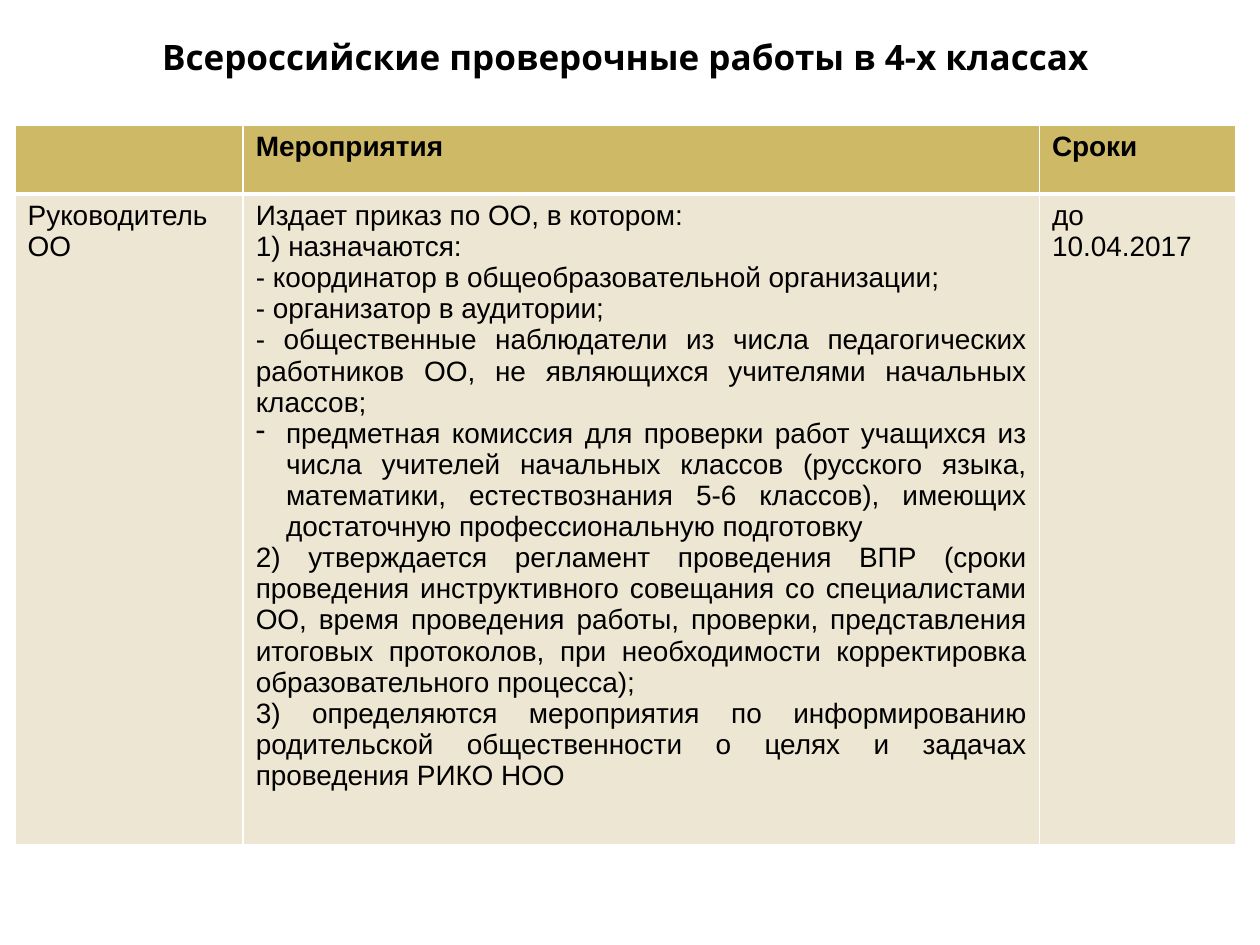
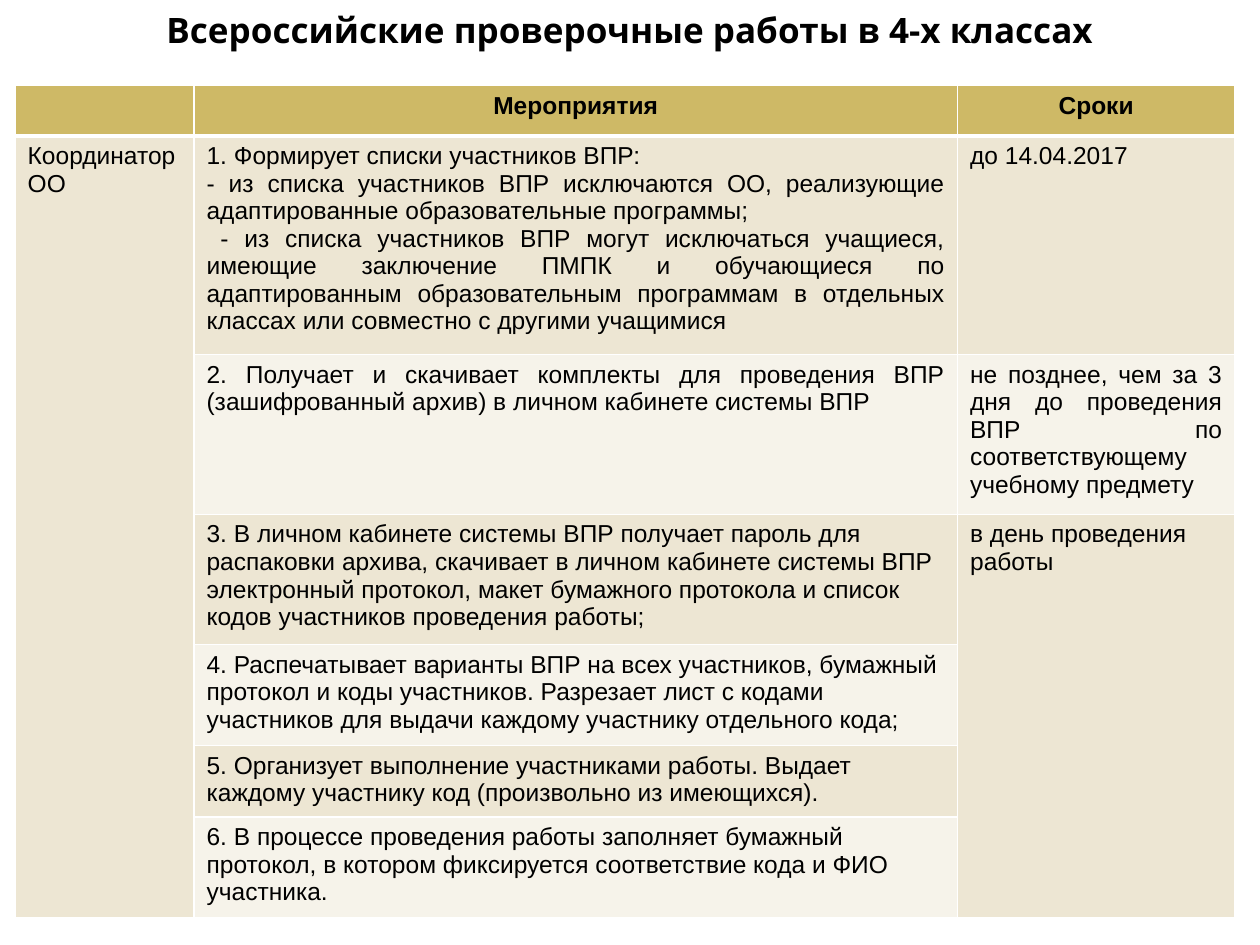
from dataclasses import dataclass

from lxml import etree
from pptx import Presentation
from pptx.dml.color import RGBColor
from pptx.enum.text import MSO_ANCHOR, PP_ALIGN
from pptx.oxml.ns import qn
from pptx.util import Inches, Pt

LEFT, CENTER, JUSTIFY = PP_ALIGN.LEFT, PP_ALIGN.CENTER, PP_ALIGN.JUSTIFY
MIDDLE = MSO_ANCHOR.MIDDLE

COLORS = {
    "text": "000000",
    "header": "CEB966",
    "band_dark": "EDE6D3",
    "band_light": "F6F3EA",
    "border": "FFFFFF",
}
TITLE = "Всероссийские проверочные работы в 4-х классах"
TITLE_FONT = "Open Sans"
BODY_FONT = "Arial"
TABLE_LEFT = 0.12
BULLET_INDENT = 0.24


@dataclass
class Line:
    text: str
    alignment: PP_ALIGN = LEFT
    bullet: str = ""
    first_indent: float = 0


def justified(*texts):
    return [Line(text, JUSTIFY) for text in texts]


def set_font(paragraph, name, size, bold):
    paragraph.font.name = name
    paragraph.font.size = Pt(size)
    paragraph.font.bold = bold
    paragraph.font.color.rgb = RGBColor.from_string(COLORS["text"])


def set_indent(paragraph, line):
    properties = paragraph._p.get_or_add_pPr()
    if line.bullet:
        properties.set("marL", str(Inches(BULLET_INDENT)))
        properties.set("indent", str(-Inches(BULLET_INDENT)))
        bullet = etree.SubElement(properties, qn("a:buChar"))
        bullet.set("char", line.bullet)
    elif line.first_indent:
        properties.set("indent", str(Inches(line.first_indent)))


def set_borders(cell, bottom_width):
    properties = cell._tc.get_or_add_tcPr()
    widths = {"a:lnL": 1, "a:lnR": 1, "a:lnT": 1, "a:lnB": bottom_width}
    for position, (tag, width) in enumerate(widths.items()):
        border = etree.Element(qn(tag), w=str(Pt(width)))
        fill = etree.SubElement(border, qn("a:solidFill"))
        etree.SubElement(fill, qn("a:srgbClr"), val=COLORS["border"])
        properties.insert(position, border)


def add_title(slide, left, top, width, height):
    shape = slide.shapes.add_textbox(
        Inches(left), Inches(top), Inches(width), Inches(height))
    frame = shape.text_frame
    frame.word_wrap = True
    frame.vertical_anchor = MIDDLE
    paragraph = frame.paragraphs[0]
    paragraph.text = TITLE
    paragraph.alignment = CENTER
    set_font(paragraph, TITLE_FONT, 20, True)


def fill_cell(cell, lines, row_index, font_size):
    is_header = row_index == 0
    bands = ("band_light", "band_dark")
    color = "header" if is_header else bands[row_index % 2]
    cell.fill.solid()
    cell.fill.fore_color.rgb = RGBColor.from_string(COLORS[color])
    set_borders(cell, 3 if is_header else 1)
    frame = cell.text_frame
    for index, line in enumerate(lines or [Line("")]):
        paragraph = frame.add_paragraph() if index else frame.paragraphs[0]
        paragraph.text = line.text
        paragraph.alignment = line.alignment
        set_indent(paragraph, line)
        set_font(paragraph, BODY_FONT, font_size, is_header)


def add_schedule(slide, top, column_widths, row_heights, rows, font_size):
    table = slide.shapes.add_table(
        len(row_heights), len(column_widths), Inches(TABLE_LEFT), Inches(top),
        Inches(sum(column_widths)), Inches(sum(row_heights))).table
    for column, width in zip(table.columns, column_widths):
        column.width = Inches(width)
    for row, height in zip(table.rows, row_heights):
        row.height = Inches(height)
    for row_index, row in enumerate(rows):
        for column_index, lines in enumerate(row):
            fill_cell(table.cell(row_index, column_index), lines, row_index, font_size)
    return table


def header_row(alignment):
    return [[], [Line("Мероприятия", alignment)], [Line("Сроки", alignment)]]


def build_head_slide(slide):
    add_title(slide, 0.12, 0.13, 9.69, 0.63)
    tasks = justified(
        "Издает приказ по ОО, в котором:",
        "1) назначаются:",
        "- координатор в общеобразовательной организации;",
        "- организатор в аудитории;",
        "- общественные наблюдатели из числа педагогических работников ОО, "
        "не являющихся учителями начальных классов;",
    ) + [Line(
        "предметная комиссия для проверки работ учащихся из числа учителей "
        "начальных классов (русского языка, математики, естествознания "
        "5-6 классов), имеющих достаточную профессиональную подготовку",
        JUSTIFY, bullet="-",
    )] + justified(
        "2) утверждается регламент проведения ВПР (сроки проведения "
        "инструктивного совещания со специалистами ОО, время проведения работы, "
        "проверки, представления итоговых протоколов, при необходимости "
        "корректировка образовательного процесса);",
        "3) определяются мероприятия по информированию родительской "
        "общественности о целях и задачах проведения РИКО НОО",
    )
    rows = [
        header_row(JUSTIFY),
        [justified("Руководитель ОО"), tasks, justified("до 10.04.2017")],
    ]
    add_schedule(slide, 0.99, [1.81, 6.32, 1.56], [0.55, 5.12], rows, 16)


def build_coordinator_slide(slide):
    add_title(slide, 0, 0, 10, 0.47)
    lists_task = justified(
        "1. Формирует списки участников ВПР:",
        "- из списка участников ВПР исключаются ОО, реализующие "
        "адаптированные образовательные программы;",
    ) + [Line(
        "- из списка участников ВПР могут исключаться учащиеся, имеющие "
        "заключение ПМПК и обучающиеся по адаптированным образовательным "
        "программам в отдельных классах или совместно с другими учащимися",
        JUSTIFY, first_indent=0.11,
    )]
    download_task = justified(
        "2. Получает и скачивает комплекты для проведения ВПР "
        "(зашифрованный архив) в личном кабинете системы ВПР")
    download_term = justified(
        "не позднее, чем за 3 дня до проведения ВПР по соответствующему "
        "учебному предмету")
    password_task = [Line(
        "3. В личном кабинете системы ВПР получает пароль для распаковки "
        "архива, скачивает в личном кабинете системы ВПР электронный протокол, "
        "макет бумажного протокола и список кодов участников проведения работы;")]
    exam_day_tasks = [
        "4. Распечатывает варианты ВПР на всех участников, бумажный протокол "
        "и коды участников. Разрезает лист с кодами участников для выдачи "
        "каждому участнику отдельного кода;",
        "5. Организует выполнение участниками работы. Выдает каждому "
        "участнику код (произвольно из имеющихся).",
        "6. В процессе проведения работы заполняет бумажный протокол, "
        "в котором фиксируется соответствие кода и ФИО участника.",
    ]
    rows = [
        header_row(CENTER),
        [[Line("Координатор ОО")], lists_task, [Line("до 14.04.2017")]],
        [[], download_task, download_term],
        [[], password_task, [Line("в день проведения работы")]],
    ] + [[[], [Line(task)], []] for task in exam_day_tasks]
    row_heights = [0.4, 1.65, 1.21, 1.01, 0.76, 0.54, 0.76]
    table = add_schedule(slide, 0.68, [1.42, 6.06, 2.2], row_heights, rows, 14)
    table.cell(1, 0).merge(table.cell(6, 0))
    table.cell(3, 2).merge(table.cell(6, 2))


def main():
    presentation = Presentation()
    presentation.slide_width = Inches(10)
    presentation.slide_height = Inches(7.5)
    blank_layout = presentation.slide_layouts[6]
    for build_slide in (build_head_slide, build_coordinator_slide):
        build_slide(presentation.slides.add_slide(blank_layout))
    presentation.save("out.pptx")


if __name__ == "__main__":
    main()
